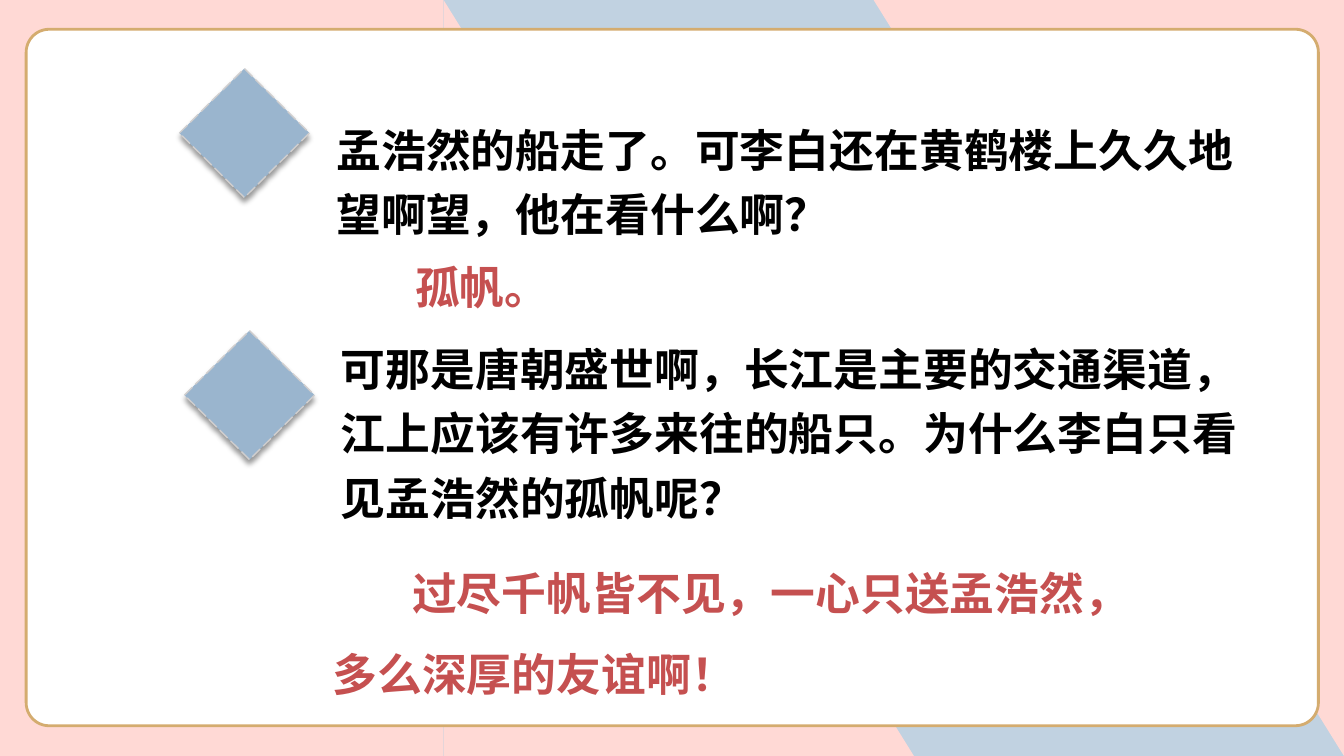
from dataclasses import dataclass

from lxml.etree import SubElement
from pptx import Presentation
from pptx.dml.color import RGBColor
from pptx.enum.dml import MSO_LINE
from pptx.enum.shapes import MSO_SHAPE
from pptx.enum.text import MSO_AUTO_SIZE
from pptx.oxml.ns import qn
from pptx.util import Inches, Pt

WIDE, HIGH = Inches(13.333), Inches(7.5)


@dataclass(frozen=True)
class Theme:
    """Colours, font and type size of the slide."""
    sky: str = "C1D2E1"
    pink: str = "FFD9D5"
    gold: str = "D4AC6F"
    white: str = "FFFFFF"
    blue: str = "9AB5CE"
    grey: str = "D0CECE"
    black: str = "000000"
    red: str = "C55050"
    font: str = "Noto Sans CJK SC"
    size: int = 32


THEME = Theme()
ASK = {"lead": 1.2, "indent": 0, "side": 0.11, "edge": 0, "color": THEME.black}
REPLY = {"lead": 1.5, "indent": 0.79, "side": 0.1, "edge": 0.05, "color": THEME.red}


def rgb(code):
    """Turn a hex code into a colour."""
    return RGBColor.from_string(code)


def place(left, top, width, height):
    """Turn percentages of the slide into lengths."""
    return [int(part * full / 100)
            for part, full in zip((left, top, width, height), (WIDE, HIGH) * 2)]


def assign(item, values):
    """Set each attribute named in a dict."""
    for name, value in values.items():
        setattr(item, name, value)


def add_form(slide, kind, box, fill, line=None):
    """Add a flat shape with an optional outline of colour and format."""
    form = slide.shapes.add_shape(kind, *place(*box))
    form.shadow.inherit = False
    form.fill.solid()
    form.fill.fore_color.rgb = rgb(fill)
    if line:
        color, style = line
        form.line.color.rgb = rgb(color)
        assign(form.line, style)
    else:
        form.line.fill.background()
    return form


def add_gem(slide, left, top):
    """Add a dashed diamond with a soft shadow below it."""
    style = {"width": Pt(1), "dash_style": MSO_LINE.LONG_DASH}
    gem = add_form(slide, MSO_SHAPE.DIAMOND, (left, top, 9.67, 17.07),
                   THEME.blue, (THEME.grey, style))
    effect = gem._element.spPr.find(qn("a:effectLst"))
    shade = SubElement(effect, qn("a:outerShdw"), blurRad=str(Pt(4)),
                       dist=str(Pt(3)), dir="5400000", algn="t", rotWithShape="0")
    color = SubElement(shade, qn("a:srgbClr"), val=THEME.black)
    SubElement(color, qn("a:alpha"), val="40000")


def add_text(slide, box, words, look):
    """Add one wrapped paragraph in the given look."""
    frame = slide.shapes.add_textbox(*place(*box)).text_frame
    side, edge = Inches(look["side"]), Inches(look["edge"])
    assign(frame, {"word_wrap": True, "auto_size": MSO_AUTO_SIZE.SHAPE_TO_FIT_TEXT,
                   "margin_left": side, "margin_right": side,
                   "margin_top": edge, "margin_bottom": edge})
    para = frame.paragraphs[0]
    para.line_spacing = look["lead"]
    para._p.get_or_add_pPr().set("indent", str(Inches(look["indent"])))
    run = para.add_run()
    run.text = words
    assign(run.font, {"size": Pt(THEME.size), "bold": True, "name": THEME.font})
    run.font.color.rgb = rgb(look["color"])
    SubElement(run.font._element, qn("a:ea"), typeface=THEME.font)


def add_back(slide):
    """Add the slanted bands and the white panel."""
    slide.background.fill.solid()
    slide.background.fill.fore_color.rgb = rgb(THEME.sky)
    wedge = MSO_SHAPE.RIGHT_TRIANGLE
    add_form(slide, wedge, (65, 0, 35, 100), THEME.pink).rotation = 180
    add_form(slide, wedge, (33, 0, 35, 100), THEME.pink)
    add_form(slide, MSO_SHAPE.RECTANGLE, (0, 0, 33, 100), THEME.pink)
    panel = add_form(slide, MSO_SHAPE.ROUNDED_RECTANGLE, (1.95, 3.87, 96.15, 92.13),
                     THEME.white, (THEME.gold, {"width": Pt(2)}))
    panel.adjustments[0] = 0.033


def main():
    """Build and save the slide."""
    deck = Presentation()
    assign(deck, {"slide_width": WIDE, "slide_height": HIGH})
    slide = deck.slides.add_slide(deck.slide_layouts[6])
    add_back(slide)
    add_gem(slide, 13.35, 9.07)
    add_text(slide, (24.22, 14.8, 70.05, 17.07),
             "孟浩然的船走了。可李白还在黄鹤楼上久久地望啊望，他在看什么啊？", ASK)
    add_text(slide, (24.22, 30.13, 19.57, 12.13), "孤帆。", REPLY)
    add_gem(slide, 13.73, 43.73)
    add_text(slide, (24.53, 43.73, 70.05, 25.6),
             "可那是唐朝盛世啊，长江是主要的交通渠道，江上应该有许多来往的船只。"
             "为什么李白只看见孟浩然的孤帆呢？", ASK)
    add_text(slide, (24, 70.67, 60.3, 22.67),
             "过尽千帆皆不见，一心只送孟浩然，多么深厚的友谊啊！", REPLY)
    deck.save("out.pptx")


if __name__ == "__main__":
    main()
